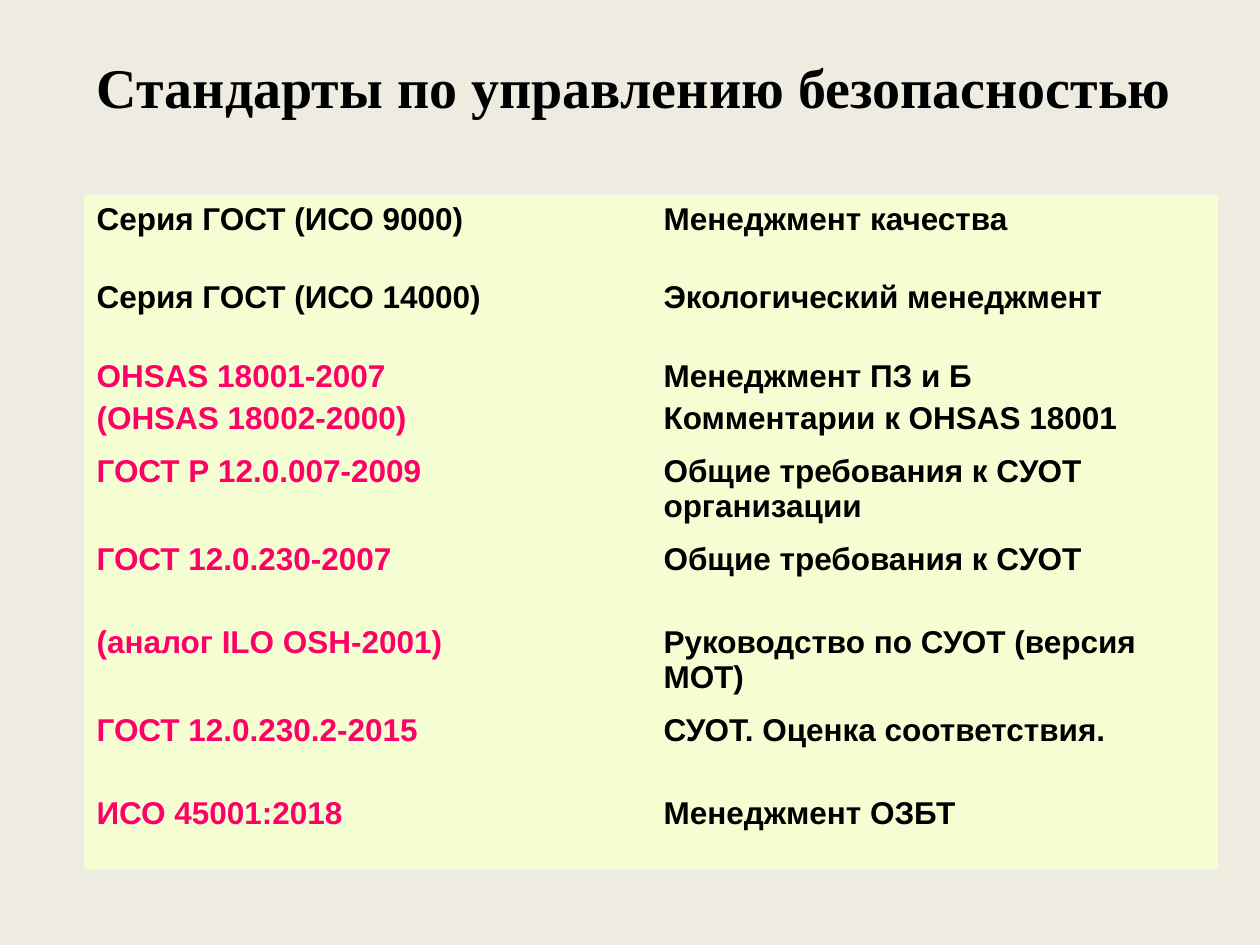
from typing import NamedTuple

from pptx import Presentation
from pptx import util as u
from pptx.dml.color import RGBColor
from pptx.enum import text

Pt = u.Pt

BACKGROUND = RGBColor(0xEE, 0xEC, 0xE1)
CELL_FILL = RGBColor(0xF5, 0xFE, 0xD2)
BLACK = RGBColor(0x00, 0x00, 0x00)
PINK = RGBColor(0xFF, 0x00, 0x66)

NO_STYLE_NO_GRID = "{2D5ABB26-0587-4C30-8999-92F81FD0307C}"
LEFT, TOP, COLUMN_WIDTH = 48, 111.6, 324


class Standard(NamedTuple):
    code: str
    subject: str
    height: float
    color: RGBColor = PINK


STANDARDS = [
    Standard("Серия ГОСТ (ИСО 9000)", "Менеджмент качества", 45, BLACK),
    Standard("Серия ГОСТ (ИСО 14000)", "Экологический менеджмент", 45, BLACK),
    Standard("OHSAS 18001-2007\n(OHSAS 18002-2000)",
             "Менеджмент ПЗ и Б\nКомментарии к OHSAS 18001", 47.5),
    Standard("ГОСТ Р 12.0.007-2009", "Общие требования к СУОТ организации", 47.5),
    Standard("ГОСТ 12.0.230-2007", "Общие требования к СУОТ", 47.5),
    Standard("(аналог ILO OSH-2001)", "Руководство по СУОТ (версия МОТ)", 47.5),
    Standard("ГОСТ 12.0.230.2-2015", "СУОТ. Оценка соответствия.", 47.5),
    Standard("ИСО 45001:2018", "Менеджмент ОЗБТ", 45),
]


def set_font(p, name: str, size: float, color: RGBColor) -> None:
    p.font.name = name
    p.font.size = Pt(size)
    p.font.bold = True
    p.font.color.rgb = color


def add_title(s, title: str) -> None:
    sp = s.shapes.add_textbox(Pt(25.2), Pt(15.1), Pt(674.6), Pt(67.7))
    tf = sp.text_frame
    tf.word_wrap = True
    tf.vertical_anchor = text.MSO_ANCHOR.MIDDLE
    p = tf.paragraphs[0]
    p.text = title
    p.alignment = text.PP_ALIGN.CENTER
    set_font(p, "Times New Roman", 32, BLACK)


def fill_cell(cell, content: str, color: RGBColor) -> None:
    cell.fill.solid()
    cell.fill.fore_color.rgb = CELL_FILL
    cell.text = content
    for p in cell.text_frame.paragraphs:
        p.space_before = Pt(3.6)
        set_font(p, "Arial", 18, color)


def add_standards(s, standards: list[Standard]) -> None:
    height = sum(standard.height for standard in standards)
    table = s.shapes.add_table(len(standards), 2, Pt(LEFT), Pt(TOP),
                               Pt(2 * COLUMN_WIDTH), Pt(height)).table
    table.first_row = table.horz_banding = False
    table._tbl.tblPr[0].text = NO_STYLE_NO_GRID  # no cell borders
    for row, standard in zip(table.rows, standards):
        row.height = Pt(standard.height)
        fill_cell(row.cells[0], standard.code, standard.color)
        fill_cell(row.cells[1], standard.subject, BLACK)


def main() -> None:
    prs = Presentation()
    prs.slide_width, prs.slide_height = Pt(720), Pt(540)
    s = prs.slides.add_slide(prs.slide_layouts[6])

    # Background
    s.background.fill.solid()
    s.background.fill.fore_color.rgb = BACKGROUND

    # Title and table of standards
    add_title(s, "Стандарты по управлению безопасностью")
    add_standards(s, STANDARDS)
    prs.save("out.pptx")


if __name__ == "__main__":
    main()
